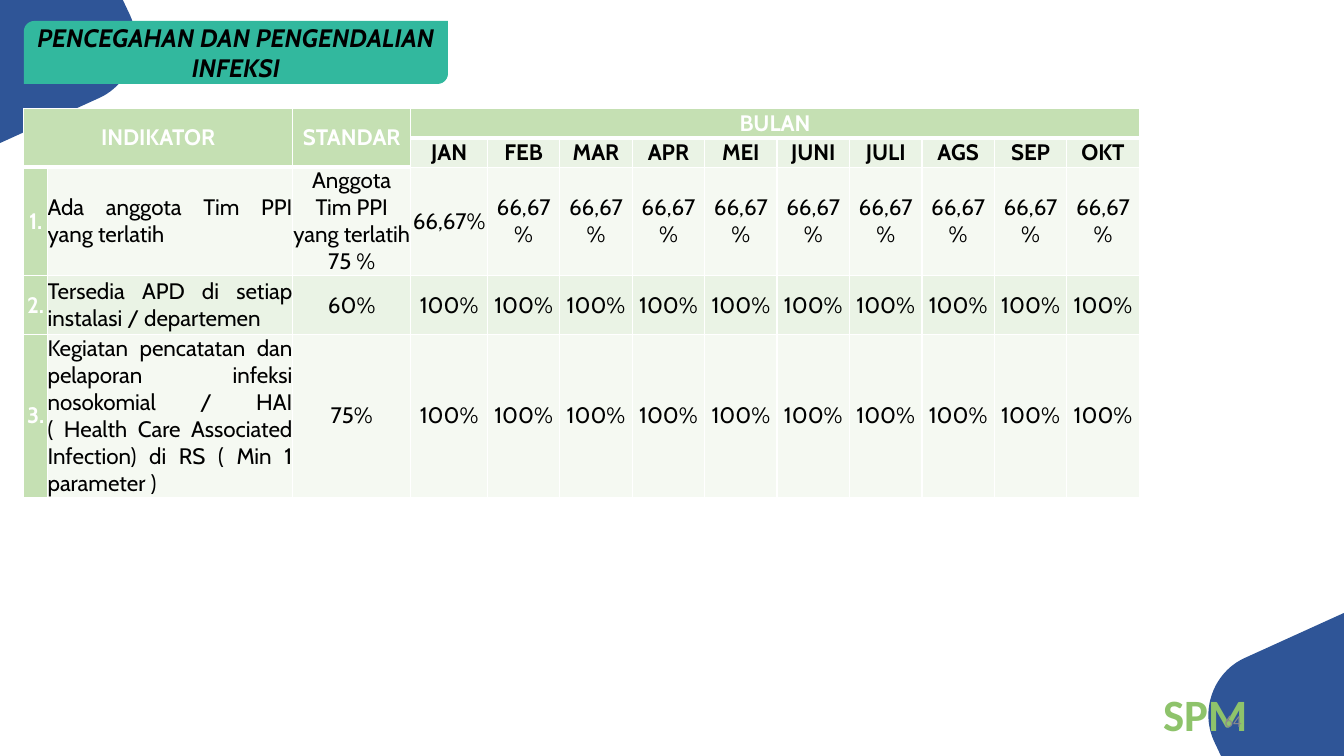
from lxml import etree
from pptx import Presentation
from pptx.dml.color import RGBColor
from pptx.enum.shapes import MSO_SHAPE
from pptx.enum.text import MSO_ANCHOR, MSO_AUTO_SIZE, PP_ALIGN
from pptx.oxml.ns import qn
from pptx.util import Pt

LEFT, CENTER, RIGHT, JUSTIFY = PP_ALIGN.LEFT, PP_ALIGN.CENTER, PP_ALIGN.RIGHT, PP_ALIGN.JUSTIFY
MIDDLE, TOP = MSO_ANCHOR.MIDDLE, MSO_ANCHOR.TOP
TITLE_ONLY = 5
WIDTH, HEIGHT = 960, 540

COLORS = {
    "navy": "2F5597",
    "teal": "32B89E",
    "header": "C5E0B3",
    "band": "EAF3E5",
    "pale": "F5F9F2",
    "white": "FFFFFF",
    "black": "000000",
    "spm": "8EC36B",
    "gray": "8C8C8C",
}


def write(frame, text, size, color, font, bold=False, align=CENTER, anchor=MIDDLE):
    frame.text = text
    frame.word_wrap = True
    frame.vertical_anchor = anchor
    para = frame.paragraphs[0]
    para.alignment = align
    for span in para.runs:
        span.font.size = Pt(size)
        span.font.name = font
        span.font.bold = bold
        span.font.color.rgb = RGBColor.from_string(COLORS[color])


def add_border(cell, side, width):
    line = etree.SubElement(cell._tc.get_or_add_tcPr(), qn(f"a:ln{side}"), w=str(Pt(width)))
    fill = etree.SubElement(line, qn("a:solidFill"))
    etree.SubElement(fill, qn("a:srgbClr"), val=COLORS["white"])


deck = Presentation()
deck.slide_width, deck.slide_height = Pt(WIDTH), Pt(HEIGHT)
page = deck.slides.add_slide(deck.slide_layouts[TITLE_ONLY])

# Corner shapes: one outline with a rounded tip, turned half round for the other corner
bend = [(92.9, 10.8), (103, 33.1), (92.9, 59.8), (71.3, 69.8)]
outline = [(0, 0), (87.8, 0)]
for step in range(25):
    t = step / 24
    weights = [(1 - t) ** 3, 3 * t * (1 - t) ** 2, 3 * t ** 2 * (1 - t), t ** 3]
    outline.append(tuple(sum(w * point[axis] for w, point in zip(weights, bend)) for axis in (0, 1)))
outline.append((0, 102.2))

turned = [(WIDTH - x, HEIGHT - y) for x, y in outline]
for points in (turned, outline):
    corners = [(Pt(x), Pt(y)) for x, y in points]
    builder = page.shapes.build_freeform(*corners[0])
    builder.add_line_segments(corners[1:], close=True)
    corner = builder.convert_to_shape()
    corner.shadow.inherit = False
    corner.fill.solid()
    corner.fill.fore_color.rgb = RGBColor.from_string(COLORS["navy"])
    corner.line.fill.background()

# Indicator table
months = ["JAN", "FEB", "MAR", "APR", "MEI", "JUNI", "JULI", "AGS", "SEP", "OKT"]
indicators = [
    ("Ada anggota Tim PPI yang terlatih", "Anggota Tim PPI yang terlatih 75 %", "66,67%"),
    ("Tersedia APD di setiap instalasi / departemen", "60%", "100%"),
    ("Kegiatan pencatatan dan pelaporan infeksi nosokomial / HAI "
     "( Health Care Associated Infection) di RS ( Min 1 parameter )", "75%", "100%"),
]
rows = [
    ["INDIKATOR", "", "STANDAR", "BULAN"] + [""] * 9,
    ["", "", ""] + months,
]
for number, (indicator, standard, value) in enumerate(indicators, 1):
    rows.append([f"{number}.", indicator, standard] + [value] * len(months))

column_widths = [17, 175, 84.5, 54.7] + [51.75] * 9
row_heights = [21, 21, 77.2, 42.3, 116]
table = page.shapes.add_table(
    len(rows), len(column_widths), Pt(17), Pt(77.5),
    Pt(sum(column_widths)), Pt(sum(row_heights))).table
for column, width in zip(table.columns, column_widths):
    column.width = Pt(width)
for row, height in zip(table.rows, row_heights):
    row.height = Pt(height)
table.cell(0, 0).merge(table.cell(1, 1))
table.cell(0, 2).merge(table.cell(1, 2))
table.cell(0, 3).merge(table.cell(0, 12))

for r, texts in enumerate(rows):
    for c, text in enumerate(texts):
        cell = table.cell(r, c)
        is_header = r == 0 or c == 0 or (r == 1 and c < 3)
        under_header = r == 0 or (r == 1 and c < 3)
        cell.margin_left = cell.margin_right = cell.margin_top = cell.margin_bottom = 0
        cell.vertical_anchor = MIDDLE
        for side in "LR":
            add_border(cell, side, 1)
        if r == 0:
            add_border(cell, "T", 1)
        add_border(cell, "B", 3 if under_header else 1)
        cell.fill.solid()
        shade = "header" if is_header else "band" if r % 2 else "pale"
        cell.fill.fore_color.rgb = RGBColor.from_string(COLORS[shade])
        if text:
            write(cell.text_frame, text, 16, "white" if is_header else "black", "Cabin",
                  bold=is_header or r == 1,
                  align=JUSTIFY if c == 1 else CENTER)

# Title on its teal plate
title_area = Pt(17), Pt(15), Pt(303), Pt(45)
plate = page.shapes.add_shape(MSO_SHAPE.ROUND_2_DIAG_RECTANGLE, *title_area)
plate.shadow.inherit = False
plate.fill.solid()
plate.fill.fore_color.rgb = RGBColor.from_string(COLORS["teal"])
plate.line.fill.background()

title = page.shapes.title
title.left, title.top, title.width, title.height = title_area
write(title.text_frame, "PENCEGAHAN DAN PENGENDALIAN INFEKSI", 18, "black", "Cabin", bold=True)
title.text_frame.auto_size = MSO_AUTO_SIZE.NONE
title.text_frame.paragraphs[0].runs[0].font.italic = True
page.shapes._spTree.append(title._element)

# Footer label and page number
footers = [
    ("SPM", (823.7, 486.7, 85, 46), 32, "spm", True, LEFT, TOP),
    ("64", (678, 500.5, 216, 28.75), 12, "gray", False, RIGHT, MIDDLE),
]
for text, area, size, color, bold, align, anchor in footers:
    box = page.shapes.add_textbox(*[Pt(length) for length in area])
    write(box.text_frame, text, size, color, "Calibri", bold, align, anchor)

deck.save("out.pptx")
